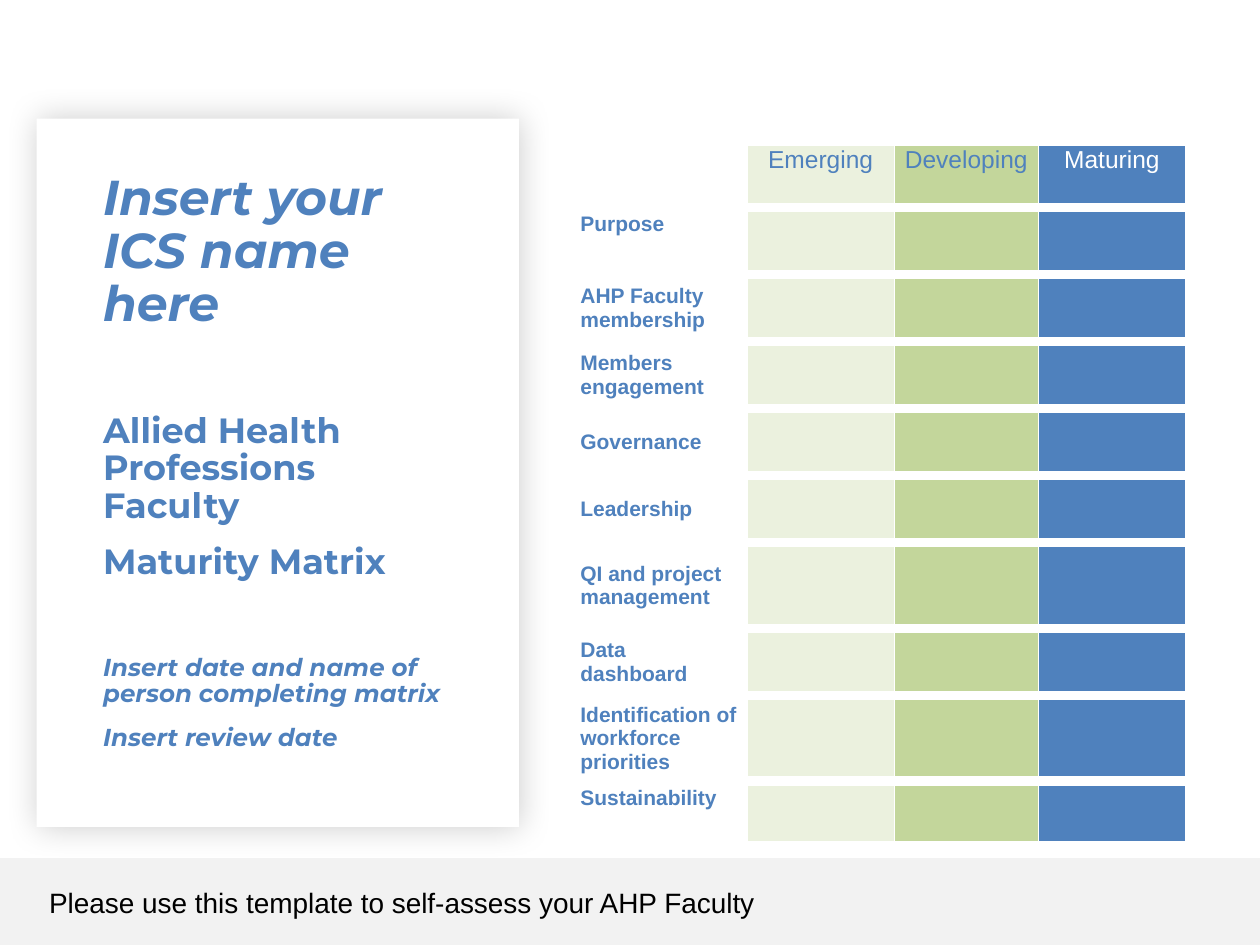
from lxml import etree
from pptx import Presentation
from pptx import util as u
from pptx.dml.color import RGBColor
from pptx.enum import shapes, text

BLUE = RGBColor(0x4F, 0x81, 0xBD)
PALE = RGBColor(0xEB, 0xF1, 0xDE)
GREEN = RGBColor(0xC3, 0xD6, 0x9B)
WHITE = RGBColor(0xFF, 0xFF, 0xFF)
GREY = RGBColor(0xF2, 0xF2, 0xF2)
BLACK = RGBColor(0, 0, 0)
NS = 'xmlns:a="http://schemas.openxmlformats.org/drawingml/2006/main"'
MID, TOP = text.MSO_ANCHOR.MIDDLE, text.MSO_ANCHOR.TOP


def write(para, words, tint, **form):
    run = para.add_run()
    run.text = words
    run.font.color.rgb = tint
    for key, val in form.items():
        setattr(run.font, key, val)


def edge(cell, side, width):
    cell._tc.get_or_add_tcPr().append(etree.fromstring(
        f'<a:{side} {NS} w="{u.Pt(width)}"><a:solidFill>'
        f'<a:srgbClr val="{WHITE}"/></a:solidFill></a:{side}>'))


deck = Presentation()
deck.slide_width, deck.slide_height = u.Cm(25.4), u.Cm(19.05)
slide = deck.slides.add_slide(deck.slide_layouts[6])

panels = [(0, 17.3, 25.4, 1.75, GREY), (0.74, 2.39, 9.72, 14.28, WHITE)]
for *box, tint in panels:
    card = slide.shapes.add_shape(
        shapes.MSO_SHAPE.RECTANGLE, *[u.Cm(n) for n in box])
    card.shadow.inherit = False
    card.fill.solid()
    card.fill.fore_color.rgb = tint
    card.line.fill.background()

glow = card._element.spPr.find(
    "{http://schemas.openxmlformats.org/drawingml/2006/main}effectLst")
glow.append(etree.fromstring(
    f'<a:outerShdw {NS} blurRad="{u.Pt(19)}" dist="{u.Pt(1)}" dir="0" '
    f'algn="ctr" rotWithShape="0"><a:srgbClr val="{BLACK}">'
    '<a:alpha val="20000"/></a:srgbClr></a:outerShdw>'))

box = slide.shapes.add_textbox(u.Cm(1.9), u.Cm(3.4), u.Cm(7.52), u.Cm(3.68))
frame = box.text_frame
look = dict(word_wrap=True, margin_left=u.Cm(0.18), margin_right=u.Cm(0.18),
            margin_top=u.Cm(0.1), margin_bottom=u.Cm(0.1))
for key, val in look.items():
    setattr(frame, key, val)
lines = [
    ("Insert your ICS name here", 28, True, 0),
    ("Allied Health Professions Faculty", 20, False, 46),
    ("Maturity Matrix", 20, False, 10),
    ("Insert date and name of person completing matrix", 14, True, 42),
    ("Insert review date", 14, True, 10),
]
for i, (words, size, slant, gap) in enumerate(lines):
    para = frame.add_paragraph() if i else frame.paragraphs[0]
    para.line_spacing = 0.9
    para.space_before = u.Pt(gap)
    write(para, words, BLUE, name="Montserrat", size=u.Pt(size),
          bold=True, italic=slant)

stages = [("Emerging", PALE, BLUE), ("Developing", GREEN, BLUE),
          ("Maturing", BLUE, WHITE)]
themes = [
    ("", 1.35, TOP),
    ("Purpose", 1.35, TOP),
    ("AHP Faculty membership", 1.35, MID),
    ("Members engagement", 1.35, MID),
    ("Governance", 1.35, MID),
    ("Leadership", 1.35, MID),
    ("QI and project management", 1.73, MID),
    ("Data dashboard", 1.35, MID),
    ("Identification of workforce priorities", 1.63, MID),
    ("Sustainability", 1.22, TOP),
]
wides = [3.56, 2.97, 2.9, 2.97]
grid = slide.shapes.add_table(
    len(themes), len(wides), u.Cm(11.5), u.Cm(2.84), u.Cm(sum(wides)),
    u.Cm(sum(tall for _, tall, _ in themes))).table
grid.first_row = grid.horz_banding = False
for col, wide in zip(grid.columns, wides):
    col.width = u.Cm(wide)

pad = dict(margin_left=u.Cm(0.2), margin_right=u.Cm(0.2),
           margin_top=u.Cm(0.1), margin_bottom=u.Cm(0.1))
last = len(themes) - 1
for r, (theme, tall, anchor) in enumerate(themes):
    grid.rows[r].height = u.Cm(tall)
    for c in range(len(wides)):
        cell = grid.cell(r, c)
        for key, val in pad.items():
            setattr(cell, key, val)
        thick = 6 if c else 2.25
        edge(cell, "lnT", thick)
        edge(cell, "lnB", 1 if r == last else thick)
        para = cell.text_frame.paragraphs[0]
        if c:
            stage, tint, ink = stages[c - 1]
            cell.fill.solid()
            cell.fill.fore_color.rgb = tint
            if r == 0:
                para.alignment = text.PP_ALIGN.CENTER
                write(para, stage, ink, name="Arial", size=u.Pt(14))
        else:
            cell.fill.background()
            cell.vertical_anchor = anchor
            if theme:
                write(para, theme, BLUE, name="Arial", size=u.Pt(12), bold=True)

note = slide.shapes.add_textbox(u.Cm(0.74), u.Cm(17.73), u.Cm(14.9), u.Cm(0.94))
note.text_frame.word_wrap = False
note.text_frame.auto_size = text.MSO_AUTO_SIZE.SHAPE_TO_FIT_TEXT
write(note.text_frame.paragraphs[0],
      "Please use this template to self-assess your AHP Faculty",
      BLACK, name="Arial", size=u.Pt(16))

deck.save("out.pptx")
